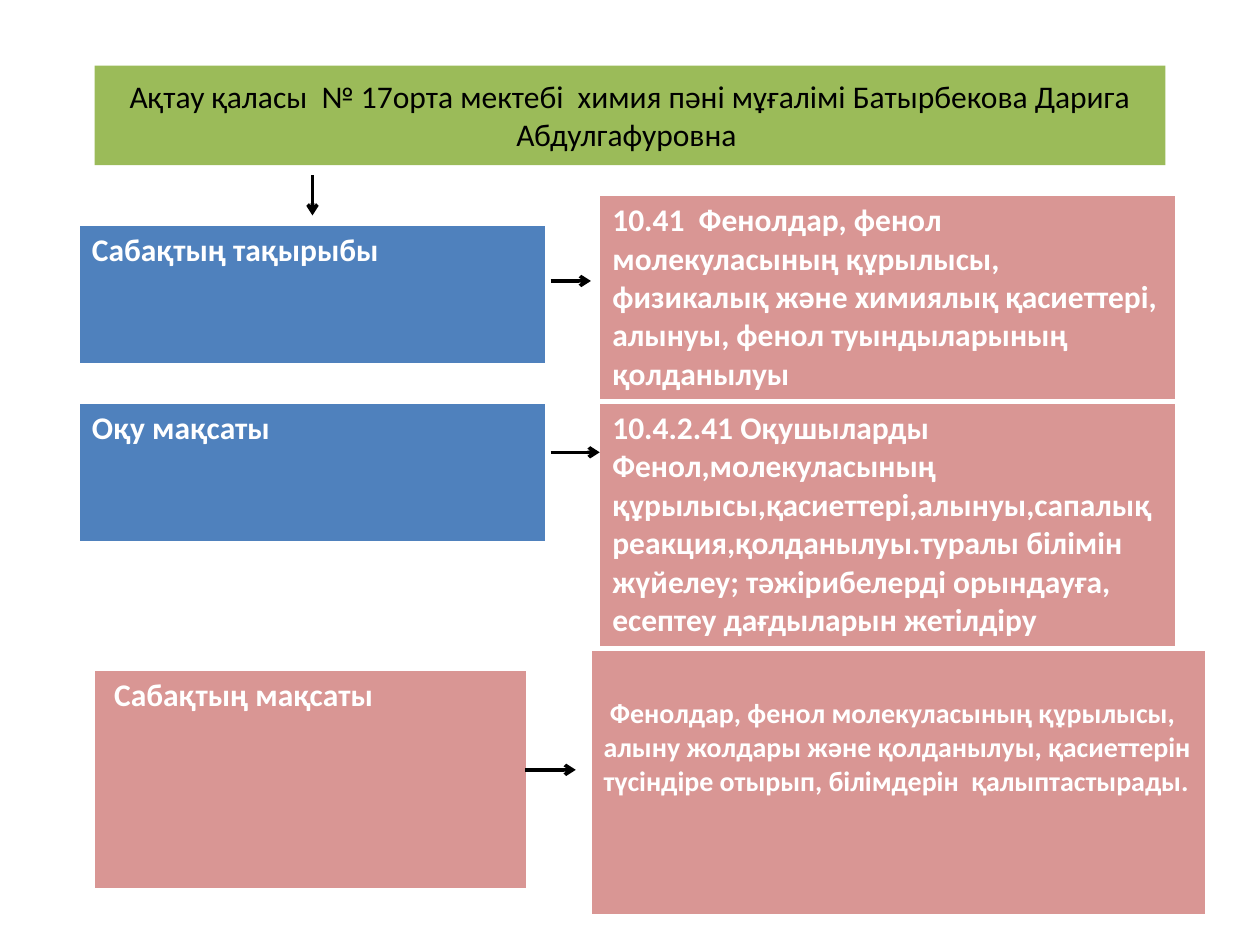
from lxml import etree
from pptx import Presentation
from pptx.dml.color import RGBColor
from pptx.enum.shapes import MSO_CONNECTOR
from pptx.enum.text import MSO_ANCHOR, PP_ALIGN
from pptx.oxml.ns import qn
from pptx.util import Inches, Pt

GREEN = RGBColor(0x9B, 0xBB, 0x59)
BLUE = RGBColor(0x4F, 0x81, 0xBD)
PINK = RGBColor(0xD9, 0x96, 0x94)
WHITE = RGBColor(0xFF, 0xFF, 0xFF)
BLACK = RGBColor(0x00, 0x00, 0x00)
FONT = "Calibri"


def add_card(page, text, left, top, width, height, color, size=18, margin_top=0.05):
    """Add a one-cell table; the default table style draws its white borders."""
    frame = page.shapes.add_table(
        1, 1, Inches(left), Inches(top), Inches(width), Inches(height))
    cell = frame.table.cell(0, 0)
    cell.fill.solid()
    cell.fill.fore_color.rgb = color
    cell.margin_top = Inches(margin_top)
    cell.text = text
    font = cell.text_frame.paragraphs[0].font
    font.name, font.size, font.bold = FONT, Pt(size), True
    font.color.rgb = WHITE


def add_arrow(page, x1, y1, x2, y2):
    arrow = page.shapes.add_connector(
        MSO_CONNECTOR.STRAIGHT, Inches(x1), Inches(y1), Inches(x2), Inches(y2))
    arrow.line.color.rgb = BLACK
    arrow.line.width = Pt(2)
    etree.SubElement(arrow.line._get_or_add_ln(), qn("a:tailEnd"), type="arrow")
    etree.SubElement(arrow._element.spPr, qn("a:effectLst"))


deck = Presentation()
deck.slide_width, deck.slide_height = Inches(10), Inches(7.5)
page = deck.slides.add_slide(deck.slide_layouts[5])

title = page.shapes.title
title.left, title.top = Inches(0.75), Inches(0.52)
title.width, title.height = Inches(8.5), Inches(0.79)
title.fill.solid()
title.fill.fore_color.rgb = GREEN
title.text = ("Ақтау қаласы  № 17орта мектебі  химия пәні мұғалімі "
              "Батырбекова Дарига Абдулгафуровна ")
title.text_frame.word_wrap = True
title.text_frame.vertical_anchor = MSO_ANCHOR.MIDDLE
para = title.text_frame.paragraphs[0]
para.alignment = PP_ALIGN.CENTER
para.font.name, para.font.size = FONT, Pt(18)
para.font.color.rgb = BLACK

# Headings on the left
for heading, left, top, width, height, color in [
    ("Сабақтың тақырыбы", 0.63, 1.79, 3.7, 1.1, BLUE),
    ("Оқу мақсаты", 0.63, 3.2, 3.7, 1.1, BLUE),
    (" Сабақтың мақсаты", 0.75, 5.32, 3.43, 1.73, PINK),
]:
    add_card(page, heading, left, top, width, height, color)

# Explanations on the right
add_card(page, "10.41  Фенолдар, фенол молекуласының құрылысы, физикалық және "
         "химиялық қасиеттері, алынуы, фенол туындыларының қолданылуы",
         4.76, 1.55, 4.57, 1.6, PINK)
add_card(page, "10.4.2.41 Оқушыларды Фенол,молекуласының "
         "құрылысы,қасиеттері,алынуы,сапалық реакция,қолданылуы.туралы білімін "
         "жүйелеу; тәжірибелерді орындауға, есептеу дағдыларын жетілдіру",
         4.76, 3.2, 4.57, 1.9, PINK)
add_card(page, " Фенолдар, фенол молекуласының құрылысы, алыну жолдары және "
         "қолданылуы, қасиеттерін түсіндіре отырып, білімдерін  қалыптастырады.",
         4.69, 5.16, 4.88, 2.1, PINK, size=16, margin_top=0.37)

# Arrows: title to first heading, then each heading to its explanation
for x1, y1, x2, y2 in [
    (2.48, 1.39, 2.48, 1.71),
    (4.37, 2.23, 4.69, 2.23),
    (4.37, 3.59, 4.76, 3.59),
    (4.17, 6.11, 4.57, 6.11),
]:
    add_arrow(page, x1, y1, x2, y2)

deck.save("out.pptx")
